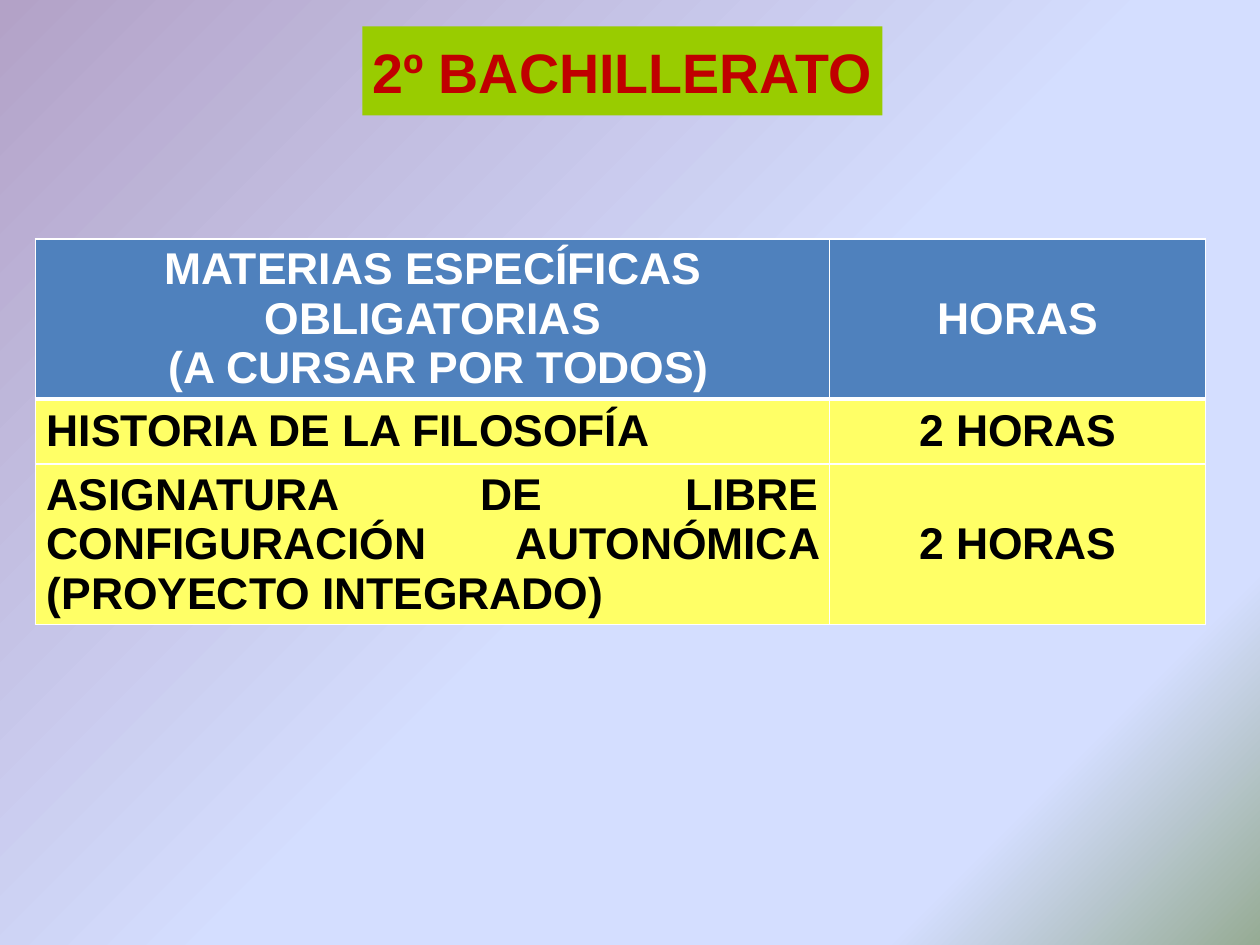
"""Build the slide with the compulsory subjects of 2º Bachillerato."""
from pptx import Presentation, oxml, util as u
from pptx.dml.color import RGBColor
from pptx.enum import text
from pptx.oxml import ns

HEAD = "2º BACHILLERATO"
ROWS = [
    ("MATERIAS ESPECÍFICAS OBLIGATORIAS\n (A CURSAR POR TODOS)", "HORAS"),
    ("HISTORIA DE LA FILOSOFÍA", "2 HORAS"),
    ("ASIGNATURA DE LIBRE CONFIGURACIÓN AUTONÓMICA (PROYECTO INTEGRADO)", "2 HORAS"),
]
WIDE = [6.95, 3.29]
HIGH = [1.03, 0.57, 1.03]
EDGES = {"L": 1, "R": 1, "T": 1, "B": 3}
STOPS = [(0, "B3A2C7"), (53, "D4DEFF"), (83, "D4DEFF"), (100, "96AB94")]
HUES = {"lime": "99CC00", "red": "C00000", "blue": "4F81BD",
        "yellow": "FFFF66", "white": "FFFFFF", "black": "000000"}
ALIGN = text.PP_ALIGN


def rgb(name):
    return RGBColor.from_string(HUES[name])


def paint(slide):
    stops = "".join(f'<a:gs pos="{pos * 1000}"><a:srgbClr val="{hue}"/></a:gs>'
                    for pos, hue in STOPS)
    back = oxml.parse_xml(
        f'<p:bg {ns.nsdecls("p", "a")}><p:bgPr><a:gradFill rotWithShape="1">'
        f'<a:gsLst>{stops}</a:gsLst><a:lin ang="2700000" scaled="0"/></a:gradFill>'
        '<a:effectLst/></p:bgPr></p:bg>')
    slide.element.cSld.insert(0, back)


def style(frame, size, hue, align):
    for para in frame.paragraphs:
        para.alignment = align
        font = para.font
        font.name, font.size, font.bold = "Arial", u.Pt(size), True
        font.color.rgb = rgb(hue)


def edge(cell, side, width):
    line = oxml.parse_xml(
        f'<a:ln{side} {ns.nsdecls("a")} w="{u.Pt(width)}"><a:solidFill>'
        f'<a:srgbClr val="{HUES["white"]}"/></a:solidFill></a:ln{side}>')
    cell._tc.get_or_add_tcPr().append(line)


def add_head(slide):
    head = slide.shapes.title
    head.left, head.top, head.width, head.height = map(u.Inches, (3.17, 0.23, 4.55, 0.78))
    head.fill.solid()
    head.fill.fore_color.rgb = rgb("lime")
    frame = head.text_frame
    frame.text = HEAD
    frame.word_wrap = True
    frame.auto_size = text.MSO_AUTO_SIZE.NONE
    frame.vertical_anchor = text.MSO_ANCHOR.MIDDLE
    frame.margin_left = frame.margin_right = frame.margin_top = frame.margin_bottom = 0
    style(frame, 35, "red", ALIGN.CENTER)


def add_grid(slide):
    box = map(u.Inches, (0.31, 2.09, sum(WIDE), sum(HIGH)))
    grid = slide.shapes.add_table(len(ROWS), len(WIDE), *box).table
    for col, wide in zip(grid.columns, WIDE):
        col.width = u.Inches(wide)
    for r, (row, high) in enumerate(zip(ROWS, HIGH)):
        grid.rows[r].height = u.Inches(high)
        for c, words in enumerate(row):
            cell = grid.cell(r, c)
            cell.text = words
            cell.vertical_anchor = text.MSO_ANCHOR.MIDDLE
            if r == 0:
                for side, width in EDGES.items():
                    edge(cell, side, width)
            cell.fill.solid()
            cell.fill.fore_color.rgb = rgb("yellow" if r else "blue")
            align = ALIGN.JUSTIFY if r and c == 0 else ALIGN.CENTER
            style(cell.text_frame, 28, "black" if r else "white", align)


def main():
    deck = Presentation()
    deck.slide_width, deck.slide_height = u.Cm(28), u.Cm(21)
    slide = deck.slides.add_slide(deck.slide_layouts[5])
    paint(slide)
    add_head(slide)
    add_grid(slide)
    deck.save("out.pptx")


if __name__ == "__main__":
    main()
